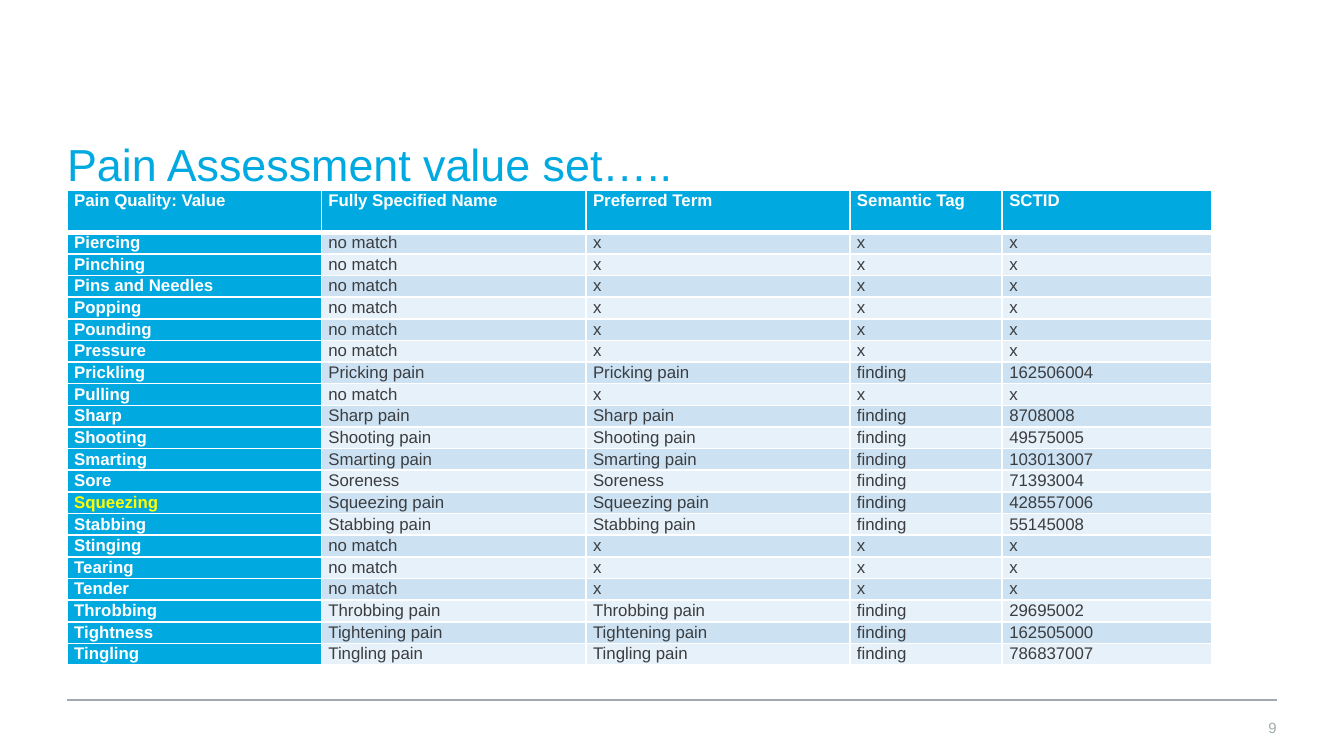
"""Build the pain assessment value set slide with its terminology table."""
from dataclasses import dataclass

from lxml.etree import SubElement
from pptx import Presentation
from pptx.dml.color import RGBColor
from pptx.enum.shapes import MSO_CONNECTOR as Connector
from pptx.enum.text import MSO_ANCHOR as Anchor, PP_ALIGN as Align
from pptx.oxml.ns import qn
from pptx.util import Pt


@dataclass(frozen=True)
class Theme:
    font: str = "Arial"
    blue: str = "00A9E0"
    grey: str = "A2AAAD"
    ink: str = "3B3D40"
    white: str = "FFFFFF"
    yellow: str = "FFFF00"
    bands: tuple = ("CCE2F3", "E7F1F9")
    title_size: float = 24
    table_size: float = 9
    number_size: float = 8


theme = Theme()


def write(frame, text, *, size, color, bold=False, align=Align.LEFT, spacing=None):
    paragraph = frame.paragraphs[0]
    paragraph.text = text
    paragraph.alignment = align
    paragraph.line_spacing = spacing
    font = paragraph.runs[0].font
    font.name, font.size, font.bold = theme.font, Pt(size), bold
    font.color.rgb = RGBColor.from_string(color)


def add_border(cell, side, width):
    line = SubElement(cell._tc.get_or_add_tcPr(), qn(f"a:ln{side}"), w=str(Pt(width)))
    SubElement(SubElement(line, qn("a:solidFill")), qn("a:srgbClr"), val=theme.white)


deck = Presentation()
deck.slide_width, deck.slide_height = Pt(720), Pt(405)
slide = deck.slides.add_slide(deck.slide_layouts[6])

footer_rule = slide.shapes.add_connector(
    Connector.STRAIGHT, Pt(684), Pt(375), Pt(36), Pt(375))
footer_rule.line.color.rgb = RGBColor.from_string(theme.grey)
footer_rule.line.width = Pt(0.75)
SubElement(footer_rule._element.spPr, qn("a:effectLst"))

labels = [
    ("Pain Assessment value set…..", (36, 65.5, 648, 44.6),
     dict(size=theme.title_size, color=theme.blue)),
    ("9", (649.4, 375, 34.6, 30),
     dict(size=theme.number_size, color=theme.grey, align=Align.RIGHT)),
]
for text, box, style in labels:
    frame = slide.shapes.add_textbox(*map(Pt, box)).text_frame
    frame.word_wrap = True
    frame.vertical_anchor = Anchor.MIDDLE
    frame.margin_left = frame.margin_right = frame.margin_top = frame.margin_bottom = 0
    write(frame, text, **style)

headings = ["Pain Quality: Value", "Fully Specified Name", "Preferred Term",
            "Semantic Tag", "SCTID"]
matches = {
    "Prickling": ("Pricking pain", "162506004"),
    "Sharp": ("Sharp pain", "8708008"),
    "Shooting": ("Shooting pain", "49575005"),
    "Smarting": ("Smarting pain", "103013007"),
    "Sore": ("Soreness", "71393004"),
    "Squeezing": ("Squeezing pain", "428557006"),
    "Stabbing": ("Stabbing pain", "55145008"),
    "Throbbing": ("Throbbing pain", "29695002"),
    "Tightness": ("Tightening pain", "162505000"),
    "Tingling": ("Tingling pain", "786837007"),
}
qualities = ["Piercing", "Pinching", "Pins and Needles", "Popping", "Pounding",
             "Pressure", "Prickling", "Pulling", "Sharp", "Shooting", "Smarting",
             "Sore", "Squeezing", "Stabbing", "Stinging", "Tearing", "Tender",
             "Throbbing", "Tightness", "Tingling"]
rows = [headings]
for quality in qualities:
    if quality in matches:
        term, sctid = matches[quality]
        rows.append([quality, term, term, "finding", sctid])
    else:
        rows.append([quality, "no match", "x", "x", "x"])

column_widths = [136.2, 141.8, 141.4, 81.6, 112.2]
row_heights = [22.5] + [11.25] * len(qualities)
value_set = slide.shapes.add_table(
    len(rows), len(headings), Pt(36), Pt(101.9),
    Pt(sum(column_widths)), Pt(sum(row_heights))).table
for column, width in zip(value_set.columns, column_widths):
    column.width = Pt(width)
for row, height in zip(value_set.rows, row_heights):
    row.height = Pt(height)

for r, entries in enumerate(rows):
    for c, entry in enumerate(entries):
        cell = value_set.cell(r, c)
        cell.margin_left = cell.margin_right = Pt(3.75)
        cell.margin_top = cell.margin_bottom = 0
        for side in "LRTB":
            under_heading = (r, side) in ((0, "B"), (1, "T"))
            add_border(cell, side, 3 if under_heading else 1)
        heading = r == 0 or c == 0
        color = theme.white if heading else theme.ink
        if entry == "Squeezing":
            color = theme.yellow
        cell.fill.solid()
        cell.fill.fore_color.rgb = RGBColor.from_string(
            theme.blue if heading else theme.bands[(r - 1) % 2])
        write(cell.text_frame, entry, size=theme.table_size, color=color,
              bold=heading, spacing=1.07)

deck.save("out.pptx")
